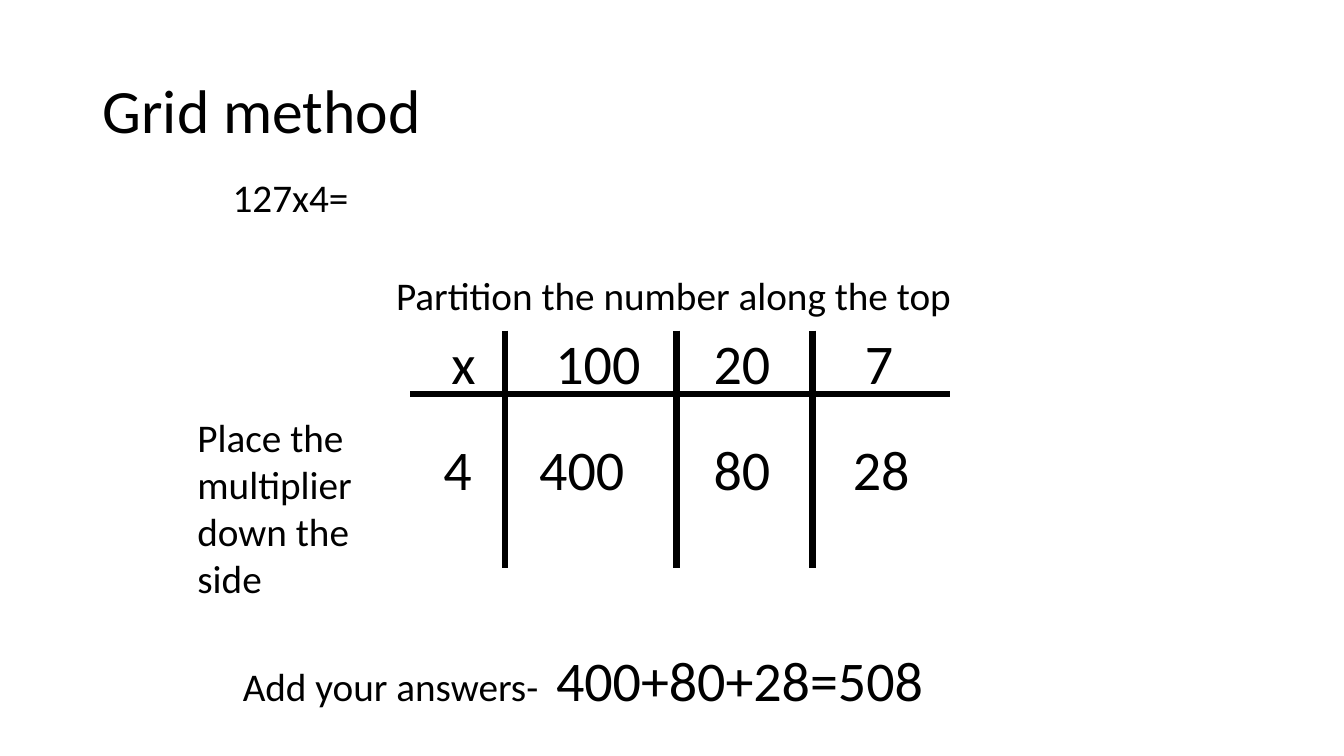
from lxml import etree
from pptx import Presentation
from pptx.dml.color import RGBColor
from pptx.enum.shapes import MSO_CONNECTOR
from pptx.enum.text import MSO_ANCHOR
from pptx.oxml.ns import qn
from pptx.util import Emu, Pt

STRAIGHT = MSO_CONNECTOR.STRAIGHT
TOP, MIDDLE = MSO_ANCHOR.TOP, MSO_ANCHOR.MIDDLE
PX = 9144  # 100 px to the inch
BLACK = "000000"
SMALL, LARGE = 28, 40

prs = Presentation()
prs.slide_width, prs.slide_height = Emu(1333 * PX), Emu(750 * PX)
s = prs.slides.add_slide(prs.slide_layouts[6])


def color(value):
    return RGBColor.from_string(value)


def add_text(box, runs, anchor=TOP, **paragraph_format):
    tf = s.shapes.add_textbox(*[Emu(v * PX) for v in box]).text_frame
    tf.word_wrap = True
    tf.vertical_anchor = anchor
    p = tf.paragraphs[0]
    for name, value in paragraph_format.items():
        setattr(p, name, value)
    for text, size in runs:
        r = p.add_run()
        r.text = text
        for name, value in {"name": "Calibri", "size": Pt(size)}.items():
            setattr(r.font, name, value)
        r.font.color.rgb = color(BLACK)


# Title and the sum to solve
add_text((92, 40, 1150, 145), [("Grid method", 44)], MIDDLE, line_spacing=0.9)
add_text((221, 172, 900, 495), [("127x4=", SMALL)], line_spacing=0.9)

# Grid lines: one rule under the heads, three between the columns
grid_lines = [(407, 391, 942, 391)] + [(x, 328, x, 564) for x in (501, 671, 806)]
for ends in grid_lines:
    line = s.shapes.add_connector(STRAIGHT, *[Emu(v * PX) for v in ends])
    line.line.color.rgb = color(BLACK)
    line.line.width = Pt(4.5)
    etree.SubElement(line._element.spPr, qn("a:effectLst"))

# Numbers in the grid: text, left, width
head_row = [("x", 438, 63), ("100", 541, 130), ("20", 698, 86), ("7", 848, 63)]
answer_row = [("4", 430, 63), ("400", 525, 126), ("80", 698, 86), ("28", 836, 86)]
for top, row in ((321, head_row), (426, answer_row)):
    for text, left, width in row:
        add_text((left, top, width, 77), [(text, LARGE)])

# Instructions around the grid
add_text((383, 264, 575, 57), [("Partition the number along the top", SMALL)])
add_text((186, 405, 181, 199), [("Place the multiplier down the side", SMALL)])
add_text((231, 636, 711, 77),
         [("Add your answers-  ", SMALL), ("400+80+28=508", LARGE)])

prs.save("out.pptx")
